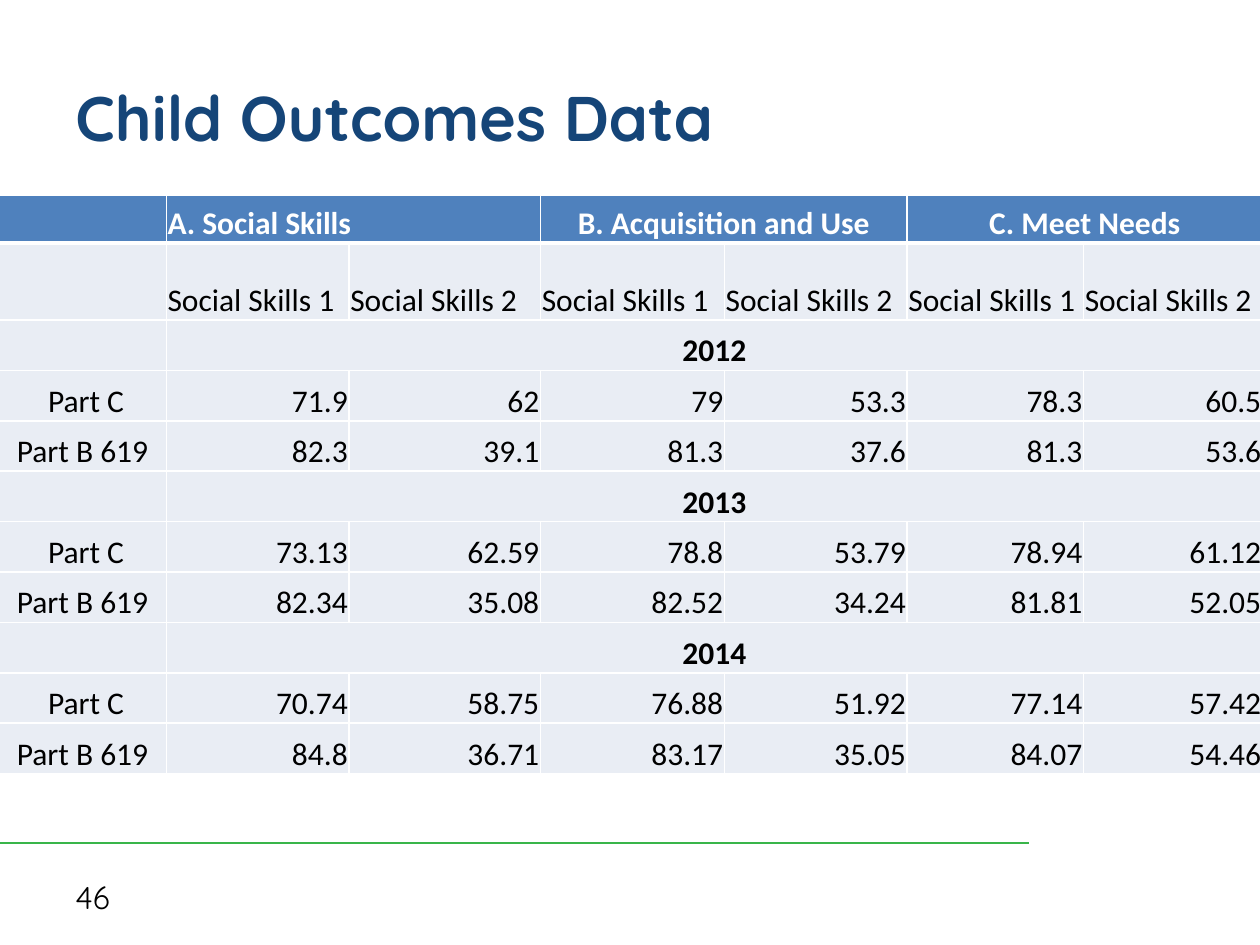
"""Build the Child Outcomes Data slide."""
from lxml import etree
from pptx import Presentation, util as u
from pptx.dml.color import RGBColor
from pptx.enum import shapes, text
from pptx.oxml import ns

TITLE = "Child Outcomes Data"
PAGE = "46"
OUTCOMES = ["A. Social Skills", "B. Acquisition and Use", "C. Meet Needs"]
MEASURES = ["Social Skills 1", "Social Skills 2"]
RESULTS = {
    "2012": [(" Part C", "71.9", "62", "79", "53.3", "78.3", "60.5"),
             ("Part B 619", "82.3", "39.1", "81.3", "37.6", "81.3", "53.6")],
    "2013": [(" Part C", "73.13", "62.59", "78.8", "53.79", "78.94", "61.12"),
             ("Part B 619", "82.34", "35.08", "82.52", "34.24", "81.81", "52.05")],
    "2014": [(" Part C", "70.74", "58.75", "76.88", "51.92", "77.14", "57.42"),
             ("Part B 619", "84.8", "36.71", "83.17", "35.05", "84.07", "54.46")],
}
COLUMN_WIDTHS = [1.33, 1.45, 1.52, 1.46, 1.45, 1.4, 1.42]
HEADER_HEIGHT, MEASURE_HEIGHT, ROW_HEIGHT = 0.38, 0.61, 0.4
NAVY, GREEN, BLUE, PALE = "154578", "39B54A", "4F81BD", "E9EDF4"
WHITE, BLACK = "FFFFFF", "000000"
LEFT, CENTER, RIGHT = text.PP_ALIGN.LEFT, text.PP_ALIGN.CENTER, text.PP_ALIGN.RIGHT


def paint(color_format, color):
    color_format.rgb = RGBColor.from_string(color)


def style(paragraph, font_name, size, color, bold=False, align=LEFT):
    paragraph.alignment = align
    font = paragraph.font
    for run in paragraph.runs:
        font = run.font
    font.name, font.size, font.bold = font_name, u.Pt(size), bold
    paint(font.color, color)


def add_label(slide, words, box, size, color, bold=False):
    frame = slide.shapes.add_textbox(*map(u.Inches, box)).text_frame
    frame.word_wrap = True
    frame.vertical_anchor = text.MSO_ANCHOR.MIDDLE
    frame.text = words
    style(frame.paragraphs[0], "Quicksand", size, color, bold)


def add_borders(cell, **widths):
    properties = cell._tc.get_or_add_tcPr()
    for side in "LRTB":
        edge = etree.SubElement(properties, ns.qn(f"a:ln{side}"), w=str(u.Pt(widths.get(side, 1))))
        fill = etree.SubElement(edge, ns.qn("a:solidFill"))
        etree.SubElement(fill, ns.qn("a:srgbClr"), val=WHITE)


def fill_cell(cell, words, row, column, is_year):
    is_header = row == 0
    cell.margin_left = cell.margin_right = cell.margin_top = u.Inches(0.01)
    cell.margin_bottom = 0
    cell.vertical_anchor = text.MSO_ANCHOR.BOTTOM
    add_borders(cell, T=3 if row == 1 else 1, B=3 if is_header else 1)
    cell.fill.solid()
    paint(cell.fill.fore_color, BLUE if is_header else PALE)
    cell.text = words
    if row == 1 or (is_header and column == 1):
        align = LEFT
    elif is_header or is_year or column == 0:
        align = CENTER
    else:
        align = RIGHT
    style(cell.text_frame.paragraphs[0], "Calibri", 18, WHITE if is_header else BLACK,
          is_header or is_year, align)


def add_outcomes(slide):
    header = [""] + [words for outcome in OUTCOMES for words in (outcome, "")]
    rows = [header, [""] + MEASURES * len(OUTCOMES)]
    year_rows = []
    for year, parts in RESULTS.items():
        year_rows.append(len(rows))
        rows += [["", year] + [""] * 5, *parts]
    heights = [HEADER_HEIGHT, MEASURE_HEIGHT] + [ROW_HEIGHT] * (len(rows) - 2)
    box = (-0.01, 1.55, sum(COLUMN_WIDTHS), sum(heights))
    table = slide.shapes.add_table(len(rows), len(COLUMN_WIDTHS), *map(u.Inches, box)).table
    table.horz_banding = False
    for column, width in zip(table.columns, COLUMN_WIDTHS):
        column.width = u.Inches(width)
    for row, height in zip(table.rows, heights):
        row.height = u.Inches(height)
    for row, values in enumerate(rows):
        for column, words in enumerate(values):
            fill_cell(table.cell(row, column), words, row, column, row in year_rows)
    for column in (1, 3, 5):
        table.cell(0, column).merge(table.cell(0, column + 1))
    for row in year_rows:
        table.cell(row, 1).merge(table.cell(row, 6))


def add_footer_rule(slide):
    ends = map(u.Inches, (0, 6.69, 8.17, 6.69))
    rule = slide.shapes.add_connector(shapes.MSO_CONNECTOR.STRAIGHT, *ends)
    rule.line.width = u.Pt(1.5)
    paint(rule.line.color, GREEN)
    etree.SubElement(rule._element.spPr, ns.qn("a:effectLst"))


def main():
    deck = Presentation()
    deck.slide_width, deck.slide_height = u.Inches(10), u.Inches(7.5)
    slide = deck.slides.add_slide(deck.slide_layouts[6])
    add_footer_rule(slide)
    add_label(slide, TITLE, (0.5, 0.3, 9, 1.25), 36, NAVY, bold=True)
    add_label(slide, PAGE, (0.5, 6.92, 2.33, 0.4), 18, BLACK)
    add_outcomes(slide)
    deck.save("out.pptx")


if __name__ == "__main__":
    main()
